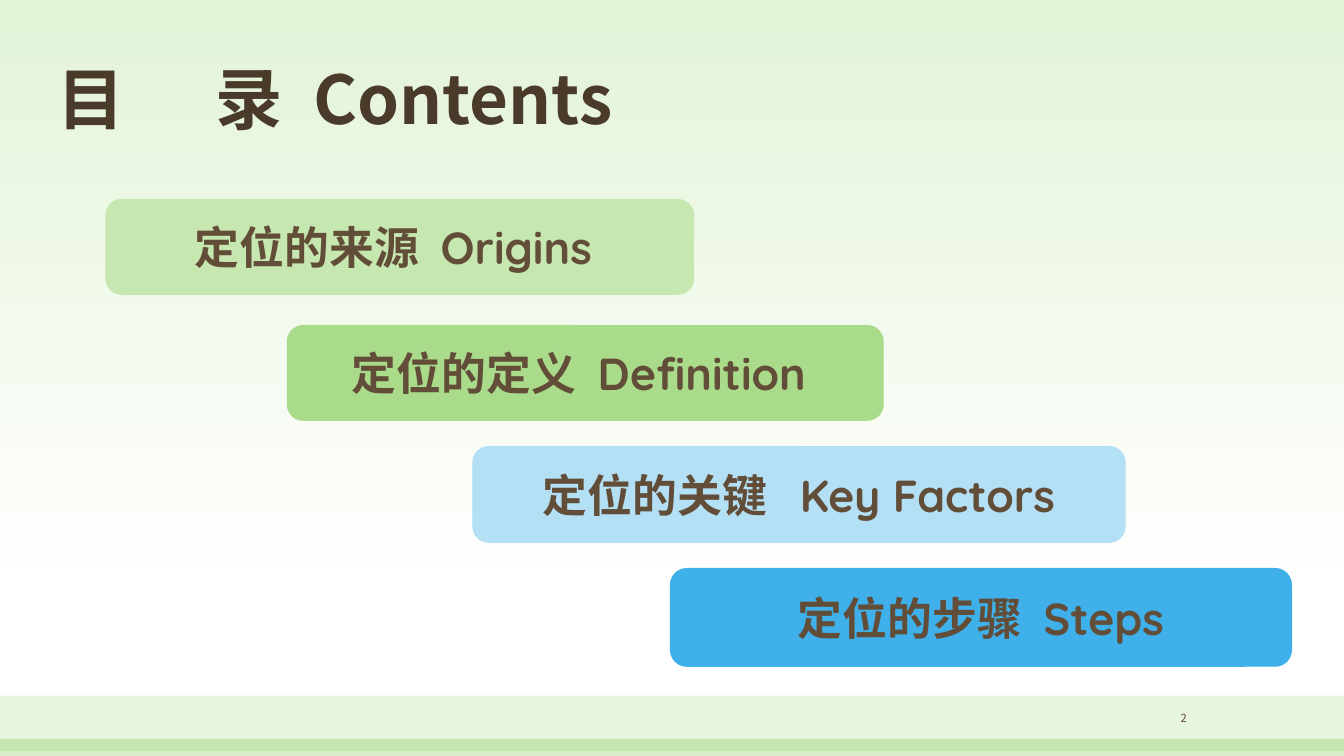
from dataclasses import dataclass

from lxml.etree import SubElement
from pptx import Presentation
from pptx.dml.color import RGBColor
from pptx.enum.shapes import MSO_SHAPE as Preset
from pptx.enum.text import MSO_ANCHOR as Anchor, MSO_AUTO_SIZE as AutoSize, PP_ALIGN as Align
from pptx.oxml.ns import qn
from pptx.shapes.autoshape import Shape
from pptx.slide import Slide
from pptx.text.text import _Paragraph as Paragraph
from pptx.util import Inches, Pt


@dataclass(frozen=True)
class Theme:
    heading_font: str = "Noto Sans CJK SC"
    body_font: str = "Quicksand"
    title_color: str = "4A3A2A"
    text_color: str = "624D38"
    band_color: str = "72C23C"
    sky_top: str = "E3F3D8"
    sky_bottom: str = "FFFFFF"
    title_size: int = 48
    topic_size: int = 32
    number_size: int = 8


@dataclass(frozen=True)
class Style:
    font: str
    size: int
    color: str
    bold: bool = True


@dataclass(frozen=True)
class Box:
    left: float
    top: float
    width: float
    height: float

    def lengths(self) -> tuple[int, int, int, int]:
        return Inches(self.left), Inches(self.top), Inches(self.width), Inches(self.height)


@dataclass(frozen=True)
class Band:
    box: Box
    opacity: int


@dataclass(frozen=True)
class Topic:
    chinese: str
    english: str
    gap: float
    color: str
    box: Box


THEME = Theme()
TITLE_STYLE = Style(THEME.heading_font, THEME.title_size, THEME.title_color)
TOPIC_STYLE = Style(THEME.body_font, THEME.topic_size, THEME.text_color)
NUMBER_STYLE = Style(THEME.heading_font, THEME.number_size, THEME.text_color, bold=False)

BANDS = [
    Band(Box(0, 6.9, 13.33, 0.55), 17),
    Band(Box(0, 7.33, 13.33, 0.17), 28),
]
TOPICS = [
    Topic("定位的来源", "Origins ", 8, "C7E7B1", Box(1.05, 1.98, 5.83, 0.94)),
    Topic("定位的定义", "Definition ", 8, "AADB8A", Box(2.85, 3.23, 5.91, 0.94)),
    Topic("定位的关键", "Key Factors", 16, "B4E0F6", Box(4.69, 4.43, 6.47, 0.95)),
    Topic("定位的步骤", "Steps", 8, "3FB0E9", Box(6.65, 5.64, 6.16, 0.97)),
]


def add_run(paragraph: Paragraph, text: str, style: Style, spacing: float = 0) -> None:
    """Append a styled run; spacing is the extra room after each letter, in points."""
    run = paragraph.add_run()
    run.text = text
    run.font.name = style.font
    run.font.size = Pt(style.size)
    run.font.bold = style.bold
    run.font.color.rgb = RGBColor.from_string(style.color)
    properties = run.font._element
    SubElement(properties, qn("a:ea")).set("typeface", THEME.heading_font)
    if spacing:
        properties.set("spc", str(round(spacing * 100)))


def add_spaced_words(paragraph: Paragraph, words: list[str], gaps: list[float], style: Style) -> None:
    """Write words with one widened space between each pair."""
    add_run(paragraph, words[0], style)
    for gap, word in zip(gaps, words[1:]):
        add_run(paragraph, " ", style, gap)
        add_run(paragraph, word, style)


def add_filled_shape(slide: Slide, preset: Preset, box: Box, color: str) -> Shape:
    shape = slide.shapes.add_shape(preset, *box.lengths())
    shape.shadow.inherit = False
    shape.fill.solid()
    shape.fill.fore_color.rgb = RGBColor.from_string(color)
    return shape


def paint_background(slide: Slide) -> None:
    fill = slide.background.fill
    fill.gradient()
    fill.gradient_angle = 270
    stops = [(0, THEME.sky_top), (0.79, THEME.sky_bottom)]
    for stop, (position, color) in zip(fill.gradient_stops, stops):
        stop.position = position
        stop.color.rgb = RGBColor.from_string(color)


def add_band(slide: Slide, band: Band) -> None:
    shape = add_filled_shape(slide, Preset.RECTANGLE, band.box, THEME.band_color)
    shape.line.fill.background()
    color = shape._element.spPr.find(qn("a:solidFill")).find(qn("a:srgbClr"))
    SubElement(color, qn("a:alpha")).set("val", str(band.opacity * 1000))


def format_title(slide: Slide) -> None:
    title = slide.shapes.title
    title.left, title.top, title.width, title.height = Box(0.47, 0.18, 6.4, 1.25).lengths()
    frame = title.text_frame
    frame.auto_size = AutoSize.NONE
    frame.word_wrap = True
    frame.vertical_anchor = Anchor.BOTTOM
    paragraph = frame.paragraphs[0]
    paragraph.alignment = Align.LEFT
    paragraph.line_spacing = 0.9
    add_spaced_words(paragraph, ["目", "录", "Contents"], [54, 11], TITLE_STYLE)


def add_topic(slide: Slide, topic: Topic) -> None:
    shape = add_filled_shape(slide, Preset.ROUNDED_RECTANGLE, topic.box, topic.color)
    shape.adjustments[0] = 0.167
    shape.line.color.rgb = RGBColor.from_string(topic.color)
    shape.line.width = Pt(0.75)
    frame = shape.text_frame
    frame.word_wrap = False
    frame.vertical_anchor = Anchor.MIDDLE
    paragraph = frame.paragraphs[0]
    paragraph.alignment = Align.CENTER
    add_spaced_words(paragraph, [topic.chinese, topic.english], [topic.gap], TOPIC_STYLE)


def add_page_number(slide: Slide) -> None:
    frame = slide.shapes.add_textbox(*Box(11.17, 6.99, 0.7, 0.26).lengths()).text_frame
    frame.word_wrap = True
    frame.vertical_anchor = Anchor.MIDDLE
    paragraph = frame.paragraphs[0]
    paragraph.alignment = Align.RIGHT
    add_run(paragraph, "2", NUMBER_STYLE)


def main() -> None:
    presentation = Presentation()
    presentation.slide_width = Inches(13.33)
    presentation.slide_height = Inches(7.5)
    slide = presentation.slides.add_slide(presentation.slide_layouts.get_by_name("Title Only"))
    paint_background(slide)
    for band in BANDS:
        add_band(slide, band)
    add_page_number(slide)
    format_title(slide)
    for topic in TOPICS:
        add_topic(slide, topic)
    presentation.save("out.pptx")


if __name__ == "__main__":
    main()
